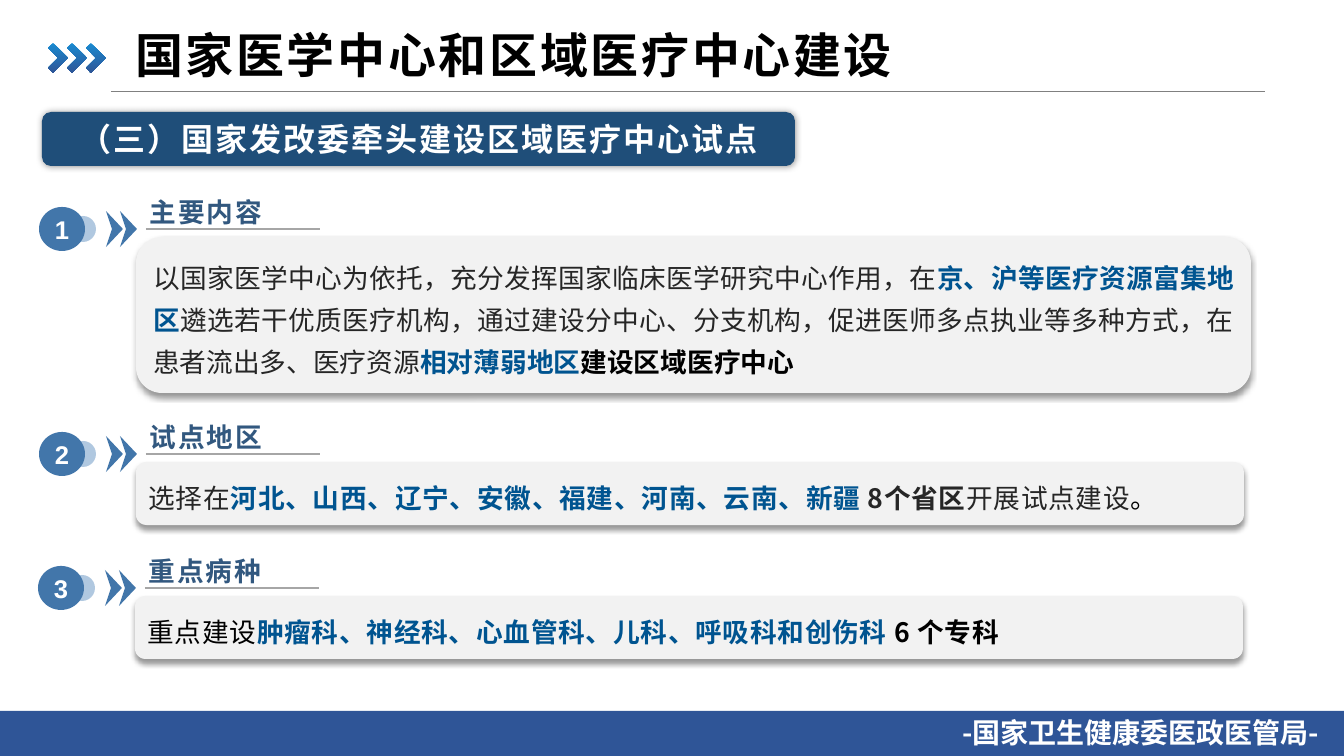
from dataclasses import dataclass

from lxml import etree
from pptx import Presentation
from pptx import util as u
from pptx.dml.color import RGBColor
from pptx.enum import shapes, text
from pptx.oxml.ns import qn

PX = 9525
GEO = shapes.MSO_SHAPE
MID, TOP, BASE = text.MSO_ANCHOR.MIDDLE, text.MSO_ANCHOR.TOP, text.MSO_ANCHOR.BOTTOM
LEFT, MIDST, JUST = text.PP_ALIGN.LEFT, text.PP_ALIGN.CENTER, text.PP_ALIGN.JUSTIFY


@dataclass(frozen=True)
class Theme:
    font: str = "Noto Sans CJK SC"
    digit: str = "Arial"
    white: str = "FFFFFF"
    black: str = "000000"
    ink: str = "262626"
    key: str = "005490"
    head: str = "32587F"
    badge: str = "4276AA"
    halo: str = "B0C8E0"
    card: str = "F2F2F2"
    navy: str = "1F4E79"
    bar: str = "2F5597"
    sky: str = "198BD1"
    rule: str = "808080"
    thin: str = "A6A6A6"
    big: float = 36
    mid: float = 24
    foot: float = 21
    body: float = 20
    num: float = 19.2


T = Theme()


def px(*nums):
    return [n * PX for n in nums]


def rgb(code):
    return RGBColor.from_string(code)


def write(shape, runs, size=T.body, color=T.black, bold=False, face=T.font, gap=0,
          align=LEFT, anchor=MID, lead=None, inset=None, wrap=True):
    frame = shape.text_frame
    frame.word_wrap = wrap
    frame.vertical_anchor = anchor
    if inset:
        (frame.margin_left, frame.margin_top,
         frame.margin_right, frame.margin_bottom) = px(*inset)
    para = frame.paragraphs[0]
    para.alignment = align
    if lead:
        para.line_spacing = lead
    for words, look in [(runs, {})] if isinstance(runs, str) else runs:
        run = para.add_run()
        run.text = words
        font = run.font
        font.name = face
        font.size = u.Pt(size)
        font.bold = look.get("bold", bold)
        font.color.rgb = rgb(look.get("color", color))
        props = run._r.get_or_add_rPr()
        props.set("spc", str(int(look.get("gap", gap) * 100)))
        etree.SubElement(props, qn("a:ea"), typeface=face)


def paint(shape, color):
    shape.shadow.inherit = False
    shape.fill.solid()
    shape.fill.fore_color.rgb = rgb(color)
    shape.line.fill.background()
    return shape


def block(tree, kind, box, color):
    return paint(tree.add_shape(kind, *px(*box)), color)


def shade(shape, blur, dist, angle):
    glow = etree.SubElement(
        shape._element.spPr.find(qn("a:effectLst")), qn("a:outerShdw"),
        blurRad=str(u.Pt(blur)), dist=str(u.Pt(dist)), dir=str(angle * 60000),
        rotWithShape="0")
    tint = etree.SubElement(glow, qn("a:srgbClr"), val=T.black)
    etree.SubElement(tint, qn("a:alpha"), val="40000")


def rule(tree, left, right, top, color, width):
    line = tree.add_connector(shapes.MSO_CONNECTOR.STRAIGHT, *px(left, top, right, top))
    line.line.color.rgb = rgb(color)
    line.line.width = u.Pt(width)
    etree.SubElement(line._element.spPr, qn("a:effectLst"))


def outline(tree, rings):
    pen = tree.build_freeform(*rings[0][0], scale=PX)
    for i, ring in enumerate(rings):
        if i:
            pen.move_to(*ring[0])
        pen.add_line_segments(ring[1:], close=True)
    return pen.convert_to_shape()


def arrows(tree, left, top):
    for i in range(3):
        x = left + i * 19
        ring = [(x, top + 5), (x + 5, top), (x + 20, top + 15),
                (x + 5, top + 30), (x, top + 25), (x + 10, top + 15)]
        shape = paint(outline(tree, [ring]), T.bar)
        shape.fill.gradient()
        shape.fill.gradient_angle = 270
        for stop, color in zip(shape.fill.gradient_stops, (T.sky, T.bar)):
            stop.color.rgb = rgb(color)


def section(slide, num, name, runs, x, y, wide, tall, gap):
    tree = slide.shapes.add_group_shape().shapes
    block(tree, GEO.OVAL, (x + 31, y - 13, 26, 26), T.halo)
    badge = block(tree, GEO.OVAL, (x, y - 22, 46, 44), T.badge)
    write(badge, str(num), size=T.num, color=T.white, bold=True, face=T.digit,
          align=MIDST, inset=(0, 0, 0, 0), wrap=False)
    rings = [[(a + 17, y), (a, y - 18), (a + 6, y), (a, y + 18)]
             for a in (x + 67, x + 81)]
    paint(outline(tree, rings), T.badge)
    label = tree.add_textbox(*px(x + 101, y - 39, 335, 43))
    write(label, name, color=T.head, bold=True, gap=1.5, anchor=BASE)
    rule(tree, x + 107, x + 281, y, T.thin, 1)
    card = block(tree, GEO.ROUNDED_RECTANGLE, (x + 97, y + 8, wide, tall), T.card)
    shade(card, 4, 3, 90)
    write(card, runs, color=T.ink, gap=gap, align=JUST, lead=1.3)


def main():
    deck = Presentation()
    deck.slide_width, deck.slide_height = px(1344, 756)
    slide = deck.slides.add_slide(deck.slide_layouts[5])
    tree = slide.shapes

    title = tree.title
    title.left, title.top, title.width, title.height = px(135, 26, 1059, 56)
    write(title, "国家医学中心和区域医疗中心建设", size=T.big, bold=True, gap=2,
          inset=(0, 5, 0, 5))
    rule(tree, 111, 1265, 92, T.rule, 0.75)
    arrows(tree, 48, 43)

    block(tree, GEO.RECTANGLE, (0, 711, 1344, 45), T.bar)
    foot = tree.add_textbox(*px(953, 711, 391, 43))
    write(foot, "-国家卫生健康委医政医管局-", size=T.foot, color=T.white, bold=True,
          anchor=TOP, wrap=False)

    banner = block(tree, GEO.ROUNDED_RECTANGLE, (42, 112, 753, 54), T.navy)
    shade(banner, 5, 0, 0)
    write(banner, "（三）国家发改委牵头建设区域医疗中心试点", size=T.mid,
          color=T.white, bold=True, gap=1.5, align=MIDST)

    key = dict(color=T.key, bold=True)
    dark = dict(color=T.black, bold=True)
    parts = [
        ("主要内容", [
            ("以国家医学中心为依托，充分发挥国家临床医学研究中心作用，在", {}),
            ("京、沪等医疗资源富集地区", key),
            ("遴选若干优质医疗机构，通过建设分中心、分支机构，促进医师多点执业等"
             "多种方式，在患者流出多、医疗资源", {}),
            ("相对薄弱地区", key),
            ("建设区域医疗中心", dark)], 39, 229, 1115, 156, 0),
        ("试点地区", [
            ("选择在", {}),
            ("河北、山西、辽宁、安徽、福建、河南、云南、新疆 ", key),
            ("8个省区", dict(bold=True)),
            ("开展试点建设", {}),
            ("。", dict(color=T.black, gap=0))], 39, 454, 1108, 63, 0.5),
        ("重点病种", [
            ("重点建设", dict(color=T.black)),
            ("肿瘤科、神经科、心血管科、儿科、呼吸科和创伤科 ", key),
            ("6 个专科", dark)], 38, 588, 1108, 63, 0.5),
    ]
    for num, part in enumerate(parts, 1):
        section(slide, num, *part)
    deck.save("out.pptx")


if __name__ == "__main__":
    main()
